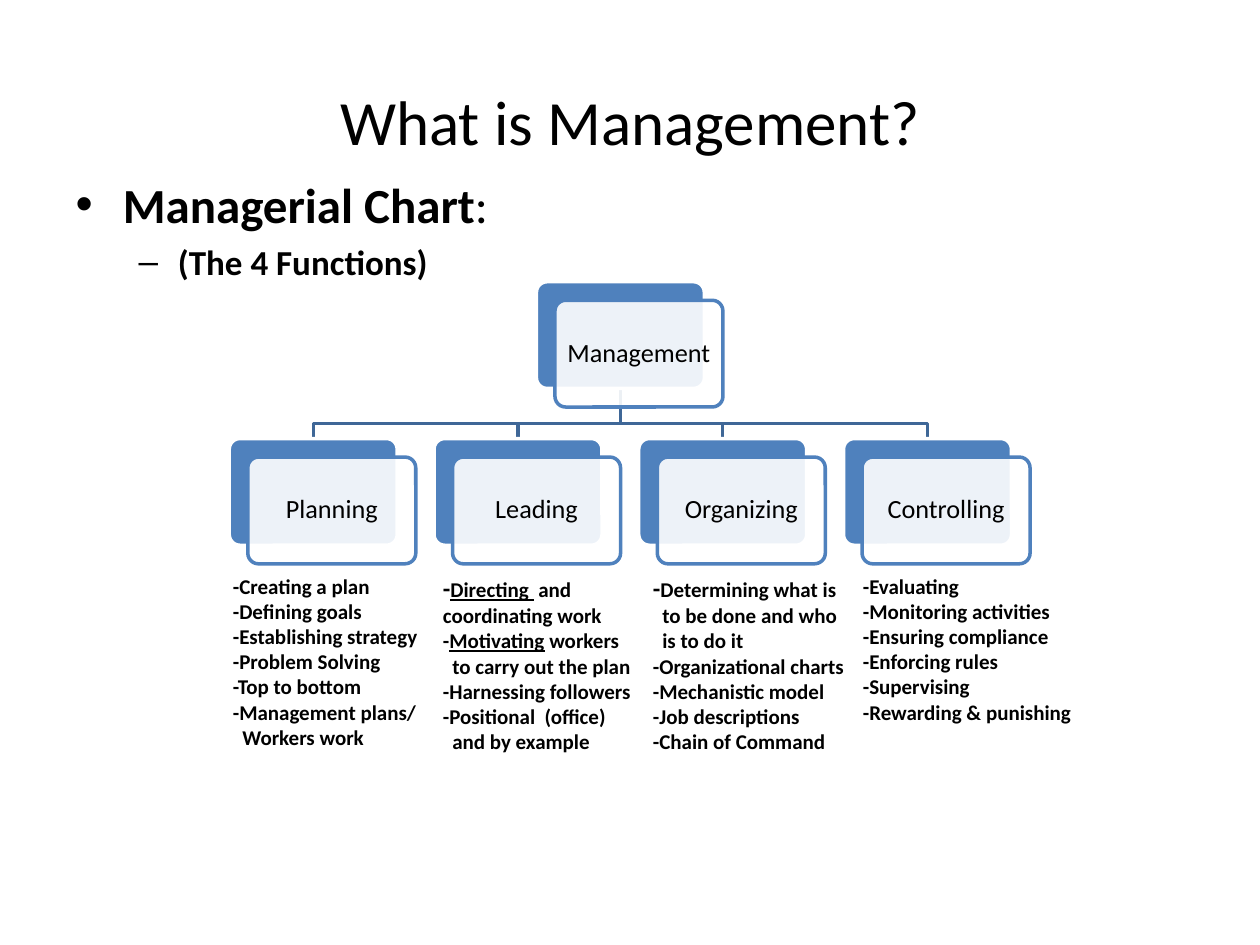
from dataclasses import dataclass

from lxml.etree import SubElement
from pptx import Presentation
from pptx.dml.color import RGBColor
from pptx.enum.shapes import MSO_SHAPE as Shape
from pptx.enum.text import MSO_ANCHOR as Anchor
from pptx.enum.text import MSO_AUTO_SIZE as AutoSize
from pptx.enum.text import PP_ALIGN as Align
from pptx.oxml.ns import qn
from pptx.util import Pt

FONT = "Calibri"
BLACK, WHITE, BLUE, DARK_BLUE = "000000", "FFFFFF", "4F81BD", "3F6797"

# Chart grid, in points
CARD_WIDTH, CARD_HEIGHT, CARD_OFFSET = 96, 61, 10.6
CARD_LEFT, CARD_STEP = 131, 117
ROOT_TOP, BRANCH_Y, CHILD_TOP = 161, 242, 250.6
DUTIES_LEFT, DUTIES_STEP, DUTIES_TOP = 126, 120, 324
HANGING_INDENT = 5.4


@dataclass
class Function:
    """One management function; underscores enclose underlined words."""
    name: str
    duties: list[str]
    column_width: float
    first_dash_size: float = 12


FUNCTIONS = [
    Function("Planning", [
        "-Creating a plan", "-Defining goals", "-Establishing strategy",
        "-Problem Solving", "-Top to bottom", "-Management plans/",
        "Workers work"], 144),
    Function("Leading", [
        "-_Directing _ and coordinating work", "-_Motivating_ workers",
        "to carry out the plan", "-Harnessing followers",
        "-Positional  (office)", "and by example"], 126, 14),
    Function("Organizing", [
        "-Determining what is", "to be done and who", "is to do it",
        "-Organizational charts", "-Mechanistic model",
        "-Job descriptions", "-Chain of Command"], 126, 14),
    Function("Controlling", [
        "-Evaluating", "-Monitoring activities", "-Ensuring compliance",
        "-Enforcing rules", "-Supervising", "-Rewarding & punishing"], 144),
]


def color(hex_value: str) -> RGBColor:
    return RGBColor.from_string(hex_value)


def place(shape, left: float, top: float, width: float, height: float) -> None:
    shape.left, shape.top = Pt(left), Pt(top)
    shape.width, shape.height = Pt(width), Pt(height)


def style_run(run, size: float, bold: bool = False) -> None:
    run.font.name, run.font.size, run.font.bold = FONT, Pt(size), bold
    run.font.color.rgb = color(BLACK)


def add_run(paragraph, text: str, size: float, bold: bool = True):
    run = paragraph.add_run()
    run.text = text
    style_run(run, size, bold)
    return run


def set_line(shape, hex_value: str) -> None:
    shape.line.color.rgb = color(hex_value)
    shape.line.width = Pt(2)
    shape.shadow.inherit = False


def add_branch(slide, start_x: float, end_x: float) -> None:
    start_y = ROOT_TOP + CARD_HEIGHT
    builder = slide.shapes.build_freeform(Pt(start_x), Pt(start_y))
    corners = [(start_x, BRANCH_Y), (end_x, BRANCH_Y), (end_x, CHILD_TOP)]
    builder.add_line_segments([(Pt(x), Pt(y)) for x, y in corners], close=False)
    branch = builder.convert_to_shape()
    branch.fill.background()
    set_line(branch, DARK_BLUE)


def add_panel(slide, left: float, top: float, fill: str, line: str):
    panel = slide.shapes.add_shape(Shape.ROUNDED_RECTANGLE, Pt(left), Pt(top),
                                   Pt(CARD_WIDTH), Pt(CARD_HEIGHT))
    panel.adjustments[0] = 0.1
    panel.fill.solid()
    panel.fill.fore_color.rgb = color(fill)
    set_line(panel, line)
    return panel


def add_card(slide, left: float, top: float, label: str) -> None:
    add_panel(slide, left, top, BLUE, WHITE)
    front = add_panel(slide, left + CARD_OFFSET, top + CARD_OFFSET, WHITE, BLUE)
    fill_color = front._element.spPr.find(qn("a:solidFill"))[0]
    SubElement(fill_color, qn("a:alpha")).set("val", "90000")

    frame = front.text_frame
    frame.text = label
    frame.word_wrap = True
    frame.vertical_anchor = Anchor.MIDDLE
    frame.margin_left = frame.margin_right = Pt(4.2)
    frame.margin_top = frame.margin_bottom = Pt(4.2)
    paragraph = frame.paragraphs[0]
    paragraph.alignment = Align.CENTER
    paragraph.line_spacing = 0.9
    style_run(paragraph.runs[0], 15)


def add_duties(slide, left: float, function: Function) -> None:
    box = slide.shapes.add_textbox(Pt(left), Pt(DUTIES_TOP),
                                   Pt(function.column_width), Pt(109))
    frame = box.text_frame
    frame.word_wrap = True
    frame.auto_size = AutoSize.SHAPE_TO_FIT_TEXT
    for index, duty in enumerate(function.duties):
        paragraph = frame.add_paragraph() if index else frame.paragraphs[0]
        if duty.startswith("-"):
            add_run(paragraph, "-", 12 if index else function.first_dash_size)
        else:
            paragraph._p.get_or_add_pPr().set("marL", str(Pt(HANGING_INDENT)))
        for part_index, part in enumerate(duty.removeprefix("-").split("_")):
            if part:
                run = add_run(paragraph, part, 12)
                run.font.underline = part_index % 2 == 1


def main() -> None:
    presentation = Presentation()
    presentation.slide_width, presentation.slide_height = Pt(720), Pt(540)
    slide = presentation.slides.add_slide(presentation.slide_layouts[1])

    # Title and list
    title, body = slide.placeholders
    place(title, 36, 24, 648, 90)
    title.text_frame.text = "What is Management?"
    style_run(title.text_frame.paragraphs[0].runs[0], 36)
    place(body, 36, 96, 648, 386.6)
    heading = body.text_frame.paragraphs[0]
    add_run(heading, "Managerial Chart", 28)
    add_run(heading, ":", 28, bold=False)
    subheading = body.text_frame.add_paragraph()
    subheading.level = 1
    add_run(subheading, "(The 4 Functions)", 20)

    # Branches behind the cards
    lefts = [CARD_LEFT + CARD_STEP * i for i in range(len(FUNCTIONS))]
    root_left = (lefts[0] + lefts[-1]) / 2
    for left in reversed(lefts):
        add_branch(slide, root_left + CARD_WIDTH / 2, left + CARD_WIDTH / 2)

    # Cards
    add_card(slide, root_left, ROOT_TOP, "Management")
    for left, function in zip(lefts, FUNCTIONS):
        add_card(slide, left, CHILD_TOP, function.name)

    # Duties under each card
    for index, function in enumerate(FUNCTIONS):
        add_duties(slide, DUTIES_LEFT + DUTIES_STEP * index, function)

    presentation.save("out.pptx")


if __name__ == "__main__":
    main()
